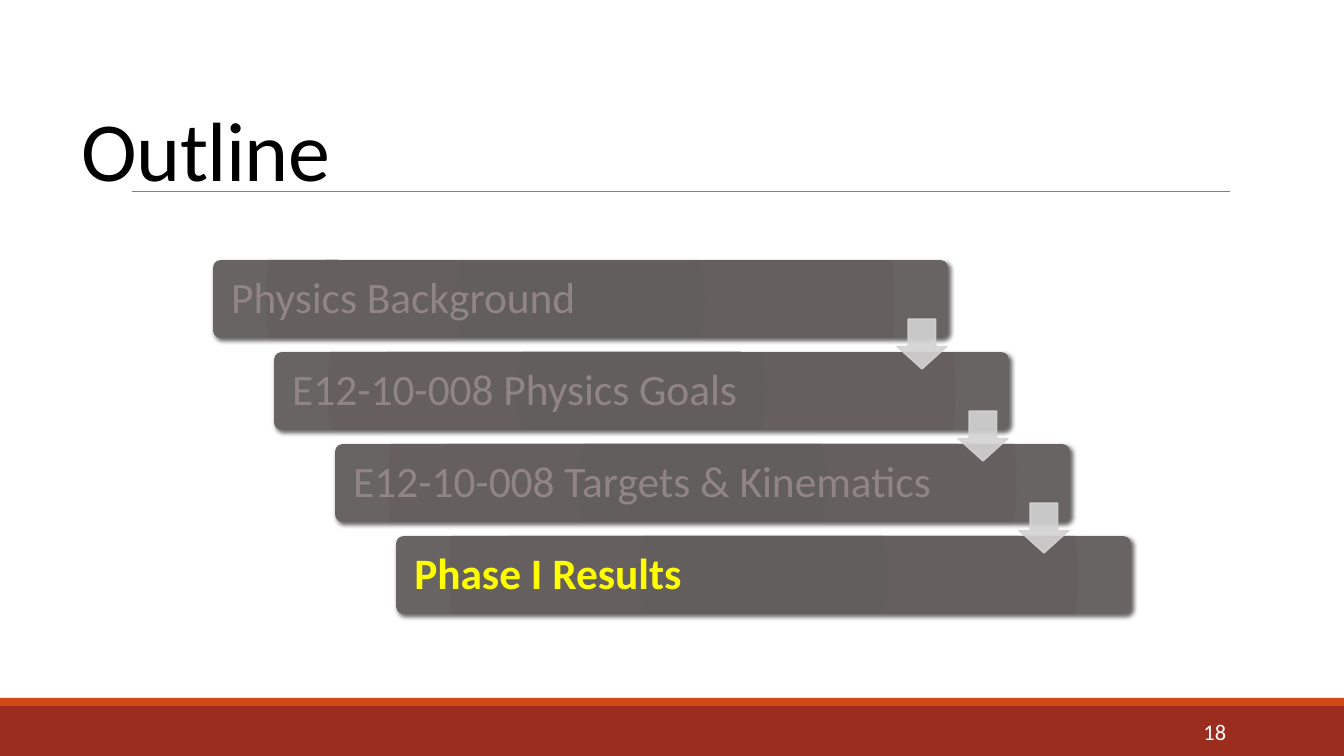
from lxml import etree
from pptx import Presentation
from pptx.dml.color import RGBColor
from pptx.enum.shapes import MSO_CONNECTOR as Conn, MSO_SHAPE as Geo
from pptx.enum.text import MSO_ANCHOR as Anchor, PP_ALIGN as Align
from pptx.oxml import parse_xml
from pptx.oxml.ns import nsdecls, qn
from pptx.util import Pt

# Content
TITLE = "Outline"
PAGE = "18"
STEPS = ["Physics Background", "E12-10-008 Physics Goals",
         "E12-10-008 Targets & Kinematics", "Phase I Results"]
NOW = 3
STOPS = [(0, "635C5C"), (34, "635E5E"), (70, "655F5F"), (100, "696464")]
BANDS = [(706, 50, "9B2D1F"), (698, 8, "D34817")]

# Layout in px
WIDE, HIGH = 1344, 756
LEFT, TOP, BAR_W, BAR_H = 213, 260, 735, 78
DX, DY = 61, 92
ARROW, ARROW_X, ARROW_Y = 50, 684, 59
FONT = "Calibri"


def px(n):
    return round(n * 914400 / 100.8)


def rgb(code):
    return RGBColor.from_string(code)


deck = Presentation()
deck.slide_width, deck.slide_height = px(WIDE), px(HIGH)
slide = deck.slides.add_slide(deck.slide_layouts[6])
shapes = slide.shapes


def shape(geo, x, y, w, h, color):
    item = shapes.add_shape(geo, px(x), px(y), px(w), px(h))
    item.shadow.inherit = False
    item.fill.solid()
    item.fill.fore_color.rgb = rgb(color)
    item.line.fill.background()
    return item


def write(item, text, size, color, anchor, align=Align.LEFT, bold=False):
    frame = item.text_frame
    frame.word_wrap = True
    frame.vertical_anchor = anchor
    para = frame.paragraphs[0]
    para.text = text
    para.alignment = align
    font = para.font
    font.name, font.size, font.bold = FONT, Pt(size), bold
    font.color.rgb = rgb(color)
    return para


def box(x, y, w, h, *args):
    return write(shapes.add_textbox(px(x), px(y), px(w), px(h)), *args)


def shade(bar):
    """Radial gradient and soft drop shadow."""
    props = bar._element.spPr
    stops = "".join(f'<a:gs pos="{at * 1000}"><a:srgbClr val="{code}"/></a:gs>'
                    for at, code in STOPS)
    grad = parse_xml(
        f'<a:gradFill {nsdecls("a")} rotWithShape="1"><a:gsLst>{stops}</a:gsLst>'
        '<a:path path="circle"><a:fillToRect l="100000" t="100000" '
        'r="100000" b="100000"/></a:path></a:gradFill>')
    props.replace(props.find(qn("a:solidFill")), grad)
    props.find(qn("a:effectLst")).append(parse_xml(
        f'<a:outerShdw {nsdecls("a")} blurRad="38100" dist="25400" dir="2700000" '
        'rotWithShape="0"><a:srgbClr val="000000"><a:alpha val="60000"/>'
        '</a:srgbClr></a:outerShdw>'))


# Footer bands
for y, h, color in BANDS:
    shape(Geo.RECTANGLE, 0, y, WIDE, h, color)

# Title and rule
rule = shapes.add_connector(Conn.STRAIGHT, px(132), px(191), px(1230), px(191))
rule.line.color.rgb = rgb("808080")
rule.line.width = Pt(0.5)
etree.SubElement(rule._element.spPr, qn("a:effectLst"))
head = box(72, 50, 1037, 154, TITLE, 60, "000000", Anchor.BOTTOM)
head.line_spacing = 0.85
head.runs[0].font._element.set("spc", "-50")

# Staircase of bars
for i, text in enumerate(STEPS):
    bar = shape(Geo.ROUNDED_RECTANGLE, LEFT + i * DX, TOP + i * DY,
                BAR_W, BAR_H, STOPS[0][1])
    bar.adjustments[0] = 0.1
    shade(bar)
    bar.text_frame.margin_left = px(16)
    color = "FFFF00" if i == NOW else "918485"
    para = write(bar, text, 31, color, Anchor.MIDDLE, bold=i == NOW)
    para.line_spacing = 0.9

# Arrows between bars
for i in range(len(STEPS) - 1):
    arrow = shape(Geo.DOWN_ARROW, LEFT + ARROW_X + i * DX,
                  TOP + ARROW_Y + i * DY, ARROW, ARROW, "D4D3D3")
    arrow.adjustments[0], arrow.adjustments[1] = 0.55, 0.45
    arrow.line.color.rgb = rgb("D4D3D3")
    arrow.line.width = Pt(1)
    for tint in arrow._element.spPr.iter(qn("a:srgbClr")):
        etree.SubElement(tint, qn("a:alpha"), val="90000")

# Page number
box(1092, 712, 144, 40, PAGE, 16, "FFFFFF", Anchor.MIDDLE, Align.RIGHT)

deck.save("out.pptx")
